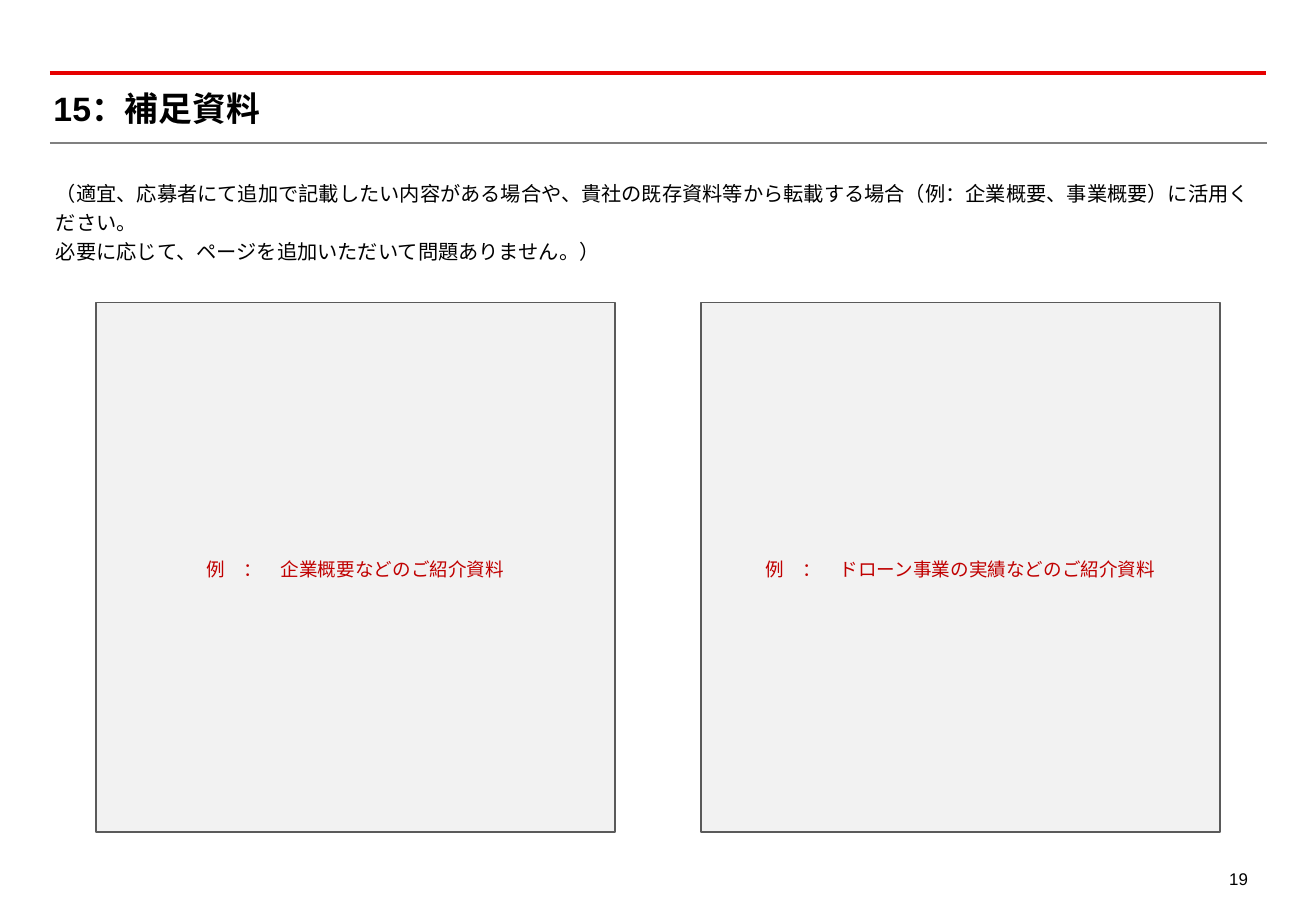
import pptx
import pptx.util
import pptx.dml.color
import pptx.enum.shapes
import pptx.enum.text
import pptx.oxml

Inches = pptx.util.Inches
Pt = pptx.util.Pt
RGBColor = pptx.dml.color.RGBColor
Align = pptx.enum.text.PP_ALIGN
Anchor = pptx.enum.text.MSO_ANCHOR
Fit = pptx.enum.text.MSO_AUTO_SIZE

BLACK = RGBColor(0x00, 0x00, 0x00)
RED = RGBColor(0xE6, 0x00, 0x00)
CRIMSON = RGBColor(0xC0, 0x00, 0x00)
GRAY = RGBColor(0x80, 0x80, 0x80)
DARK = RGBColor(0x5A, 0x5A, 0x5A)
PALE = RGBColor(0xF2, 0xF2, 0xF2)


class Page:
    font = "Arial"

    def __init__(self, deck):
        self.slide = deck.slides.add_slide(deck.slide_layouts[5])
        self.shapes = self.slide.shapes

    def label(self, shape, lines, size, color=BLACK, bold=False,
              align=Align.LEFT, anchor=Anchor.TOP, wrap=True, inset=0, space=1.2):
        frame = shape.text_frame
        edge = Inches(inset)
        style = {"margin_left": edge, "margin_right": edge, "margin_top": edge,
                 "margin_bottom": edge, "word_wrap": wrap,
                 "vertical_anchor": anchor, "auto_size": Fit.NONE}
        for name, value in style.items():
            setattr(frame, name, value)
        para = frame.paragraphs[0]
        para.alignment = align
        para.line_spacing = space
        para.space_before = Pt(0)
        for index, line in enumerate(lines):
            if index:
                para.add_line_break()
            run = para.add_run()
            run.text = line
            for name, value in {"name": self.font, "size": Pt(size), "bold": bold}.items():
                setattr(run.font, name, value)
            run.font.color.rgb = color

    def title(self, box, text):
        shape = self.shapes.title
        for name, value in zip(("left", "top", "width", "height"), box):
            setattr(shape, name, Inches(value))
        self.label(shape, [text], 20, bold=True, anchor=Anchor.MIDDLE, space=1.0)

    def text(self, box, lines, size, **style):
        self.label(self.shapes.add_textbox(*map(Inches, box)), lines, size, **style)

    def rule(self, left, right, top, color, width):
        line = self.shapes.add_connector(
            pptx.enum.shapes.MSO_CONNECTOR.STRAIGHT,
            Inches(left), Inches(top), Inches(right), Inches(top))
        line.line.color.rgb = color
        line.line.width = Pt(width)
        props = line._element.spPr
        props.append(pptx.oxml.parse_xml(
            '<a:effectLst xmlns:a="http://schemas.openxmlformats.org/drawingml/2006/main"/>'))

    def panel(self, box, text):
        shape = self.shapes.add_shape(
            pptx.enum.shapes.MSO_SHAPE.RECTANGLE, *map(Inches, box))
        shape.shadow.inherit = False
        shape.fill.solid()
        shape.fill.fore_color.rgb = PALE
        shape.line.color.rgb = DARK
        shape.line.width = Pt(1)
        self.label(shape, [text], 11, CRIMSON, align=Align.CENTER,
                   anchor=Anchor.MIDDLE, wrap=False, inset=0.02)


def main():
    deck = pptx.Presentation()
    deck.slide_width = Inches(10.83)
    deck.slide_height = Inches(7.5)
    page = Page(deck)
    page.rule(0.41, 10.42, 0.6, RED, 2)
    page.rule(0.41, 10.43, 1.18, GRAY, 1.25)
    page.title((0.44, 0.72, 9.91, 0.34), "15：補足資料")
    page.text((0.46, 1.45, 9.91, 0.46), [
        "（適宜、応募者にて追加で記載したい内容がある場合や、貴社の既存資料等から転載する場合（例：企業概要、事業概要）に活用ください。",
        "必要に応じて、ページを追加いただいて問題ありません。）"], 12)
    notes = ["例　：　企業概要などのご紹介資料", "例　：　ドローン事業の実績などのご紹介資料"]
    for index, note in enumerate(notes):
        page.panel((0.79 + 4.98 * index, 2.49, 4.27, 4.36), note)
    page.text((9.93, 7.08, 0.34, 0.28), ["19"], 10, align=Align.RIGHT,
              anchor=Anchor.MIDDLE, wrap=False)
    deck.save("out.pptx")


if __name__ == "__main__":
    main()
